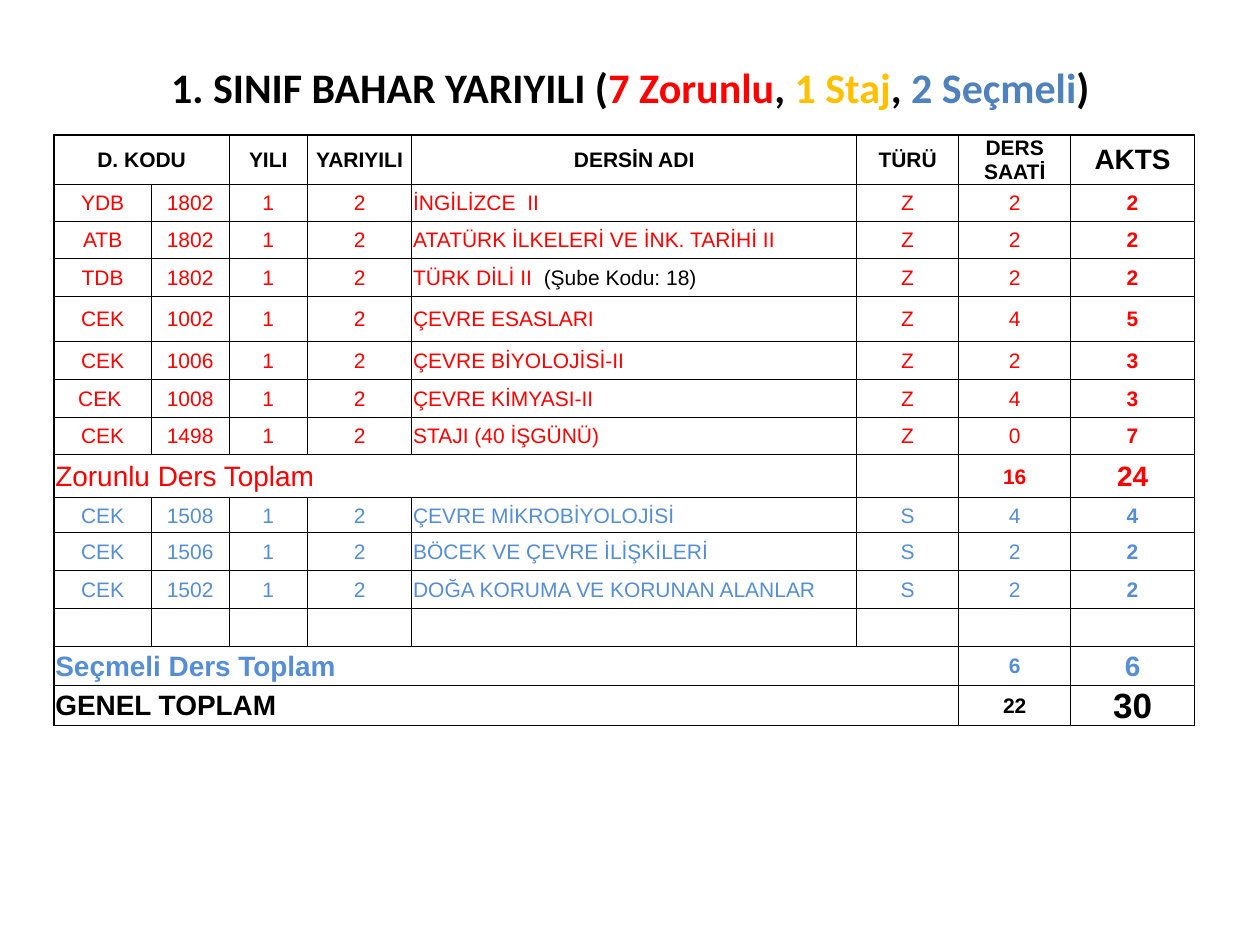
from dataclasses import dataclass
from lxml.etree import SubElement
from pptx import Presentation
from pptx.dml.color import RGBColor
from pptx.enum.text import MSO_ANCHOR as Anchor, MSO_AUTO_SIZE as Fit, PP_ALIGN as Align
from pptx.oxml.ns import qn
from pptx.util import Inches, Pt


@dataclass(frozen=True)
class Theme:
    black: str = "000000"
    red: str = "FF0000"
    gold: str = "FFC000"
    blue: str = "4F81BD"
    sky: str = "558ED5"
    head: str = "Calibri"
    body: str = "Arial"
    title: int = 24
    grand: int = 20
    total: int = 16
    text: int = 12
    thin: float = 0.5
    thick: float = 1


T = Theme()
COLS = [0.77, 0.62, 0.62, 0.83, 3.53, 0.81, 0.89, 0.98]
ROWS = [0.39, 0.3, 0.29, 0.3, 0.36, 0.3, 0.3, 0.3, 0.34, 0.28, 0.3, 0.3, 0.3, 0.31, 0.31]
NAME, HOURS, AKTS = 4, 6, 7

HEADS = ["D. KODU", "", "YILI", "YARIYILI", "DERSİN ADI", "TÜRÜ", "DERS SAATİ", "AKTS"]
# Department, code, course name, weekly hours, credits
CORE = [
    ("YDB", "1802", "İNGİLİZCE  II", "2", "2"),
    ("ATB", "1802", "ATATÜRK İLKELERİ VE İNK. TARİHİ II", "2", "2"),
    ("TDB", "1802", [("TÜRK DİLİ II  ", T.red), ("(Şube Kodu: 18)", T.black)], "2", "2"),
    ("CEK", "1002", "ÇEVRE ESASLARI", "4", "5"),
    ("CEK", "1006", "ÇEVRE BİYOLOJİSİ-II", "2", "3"),
    ("CEK ", "1008", "ÇEVRE KİMYASI-II", "4", "3"),
    ("CEK", "1498", "STAJI (40 İŞGÜNÜ)", "0", "7"),
]
ELECTIVE = [
    ("CEK", "1508", "ÇEVRE MİKROBİYOLOJİSİ", "4", "4"),
    ("CEK", "1506", "BÖCEK VE ÇEVRE İLİŞKİLERİ", "2", "2"),
    ("CEK", "1502", "DOĞA KORUMA VE KORUNAN ALANLAR", "2", "2"),
]
TITLE = [
    ("1. SINIF BAHAR YARIYILI (", T.black), ("7 Zorunlu", T.red), (", ", T.black),
    ("1 Staj", T.gold), (", ", T.black), ("2 Seçmeli", T.blue), (") ", T.black),
]


def write(frame, text, color=T.black, size=T.text, font=T.body, bold=False, align=Align.CENTER):
    """Fill a text frame with a string or a list of (text, colour) runs."""
    para = frame.paragraphs[0]
    para.alignment = align
    for part, tint in [(text, color)] if isinstance(text, str) else text:
        run = para.add_run()
        run.text = part
        run.font.name, run.font.size, run.font.bold = font, Pt(size), bold
        run.font.color.rgb = RGBColor.from_string(tint)


def border(cell, widths):
    """Set the left, right, top and bottom lines, in that order."""
    props = cell._tc.get_or_add_tcPr()
    for spot, (side, width) in enumerate(zip("LRTB", widths)):
        line = SubElement(props, qn(f"a:ln{side}"), w=str(Pt(width)))
        fill = SubElement(line, qn("a:solidFill"))
        SubElement(fill, qn("a:srgbClr"), val=T.black)
        props.insert(spot, line)


def add_title(slide, left, top, width, height):
    box = slide.shapes.add_textbox(left, top, width, height)
    box.text_frame.word_wrap = True
    box.text_frame.auto_size = Fit.SHAPE_TO_FIT_TEXT
    write(box.text_frame, TITLE, size=T.title, font=T.head, bold=True)


def style_grid(table):
    last = len(COLS) - 1
    for r, height in enumerate(ROWS):
        table.rows[r].height = Inches(height)
        for c in range(len(COLS)):
            cell = table.cell(r, c)
            cell.fill.background()
            cell.vertical_anchor = Anchor.MIDDLE
            cell.margin_left = cell.margin_right = cell.margin_top = Inches(0.01)
            cell.margin_bottom = 0
            border(cell, [T.thin if c else T.thick, T.thick if c == last else T.thin,
                          T.thin if r else T.thick, T.thin])
    for col, width in zip(table.columns, COLS):
        col.width = Inches(width)


def fill_courses(table, start, courses, kind, color):
    for r, (dept, code, name, hours, akts) in enumerate(courses, start):
        for c, text in enumerate([dept, code, "1", "2", name, kind, hours, akts]):
            write(table.cell(r, c).text_frame, text, color=color, bold=c == AKTS,
                  align=Align.LEFT if c == NAME else Align.CENTER)


def fill_total(table, row, label, hours, akts, color, span=6, bold=True, size=T.total):
    table.cell(row, 0).merge(table.cell(row, span - 1))
    write(table.cell(row, 0).text_frame, label, color=color, size=T.total, bold=bold,
          align=Align.LEFT)
    write(table.cell(row, HOURS).text_frame, hours, color=color, bold=True)
    write(table.cell(row, AKTS).text_frame, akts, color=color, size=size, bold=True)


def add_plan(slide, left, top, width, height):
    """Place the course table with its header, courses and totals."""
    frame = slide.shapes.add_table(len(ROWS), len(COLS), left, top, width, height)
    table = frame.table
    table.first_row = table.horz_banding = False
    style_grid(table)
    table.cell(0, 0).merge(table.cell(0, 1))
    for c, text in enumerate(HEADS):
        if text:
            write(table.cell(0, c).text_frame, text, bold=True,
                  size=T.total if c == AKTS else T.text)

    core = 1 + len(CORE)
    spare = core + 1 + len(ELECTIVE)
    fill_courses(table, 1, CORE, "Z", T.red)
    fill_total(table, core, "Zorunlu Ders Toplam", "16", "24", T.red, span=5, bold=False)
    write(table.cell(core, 5).text_frame, "")
    fill_courses(table, core + 1, ELECTIVE, "S", T.sky)
    for c in range(len(COLS)):
        write(table.cell(spare, c).text_frame, "")
    fill_total(table, spare + 1, "Seçmeli Ders Toplam", "6", "6", T.sky)
    fill_total(table, spare + 2, "GENEL TOPLAM", "22", "30", T.black, size=T.grand)


def main():
    deck = Presentation()
    deck.slide_width, deck.slide_height = Inches(10), Inches(7.5)
    slide = deck.slides.add_slide(deck.slide_layouts[6])
    add_plan(slide, Inches(0.43), Inches(1.07), Inches(sum(COLS)), Inches(sum(ROWS)))
    add_title(slide, Inches(0.59), Inches(0.44), Inches(8.9), Inches(0.5))
    deck.save("out.pptx")


if __name__ == "__main__":
    main()
